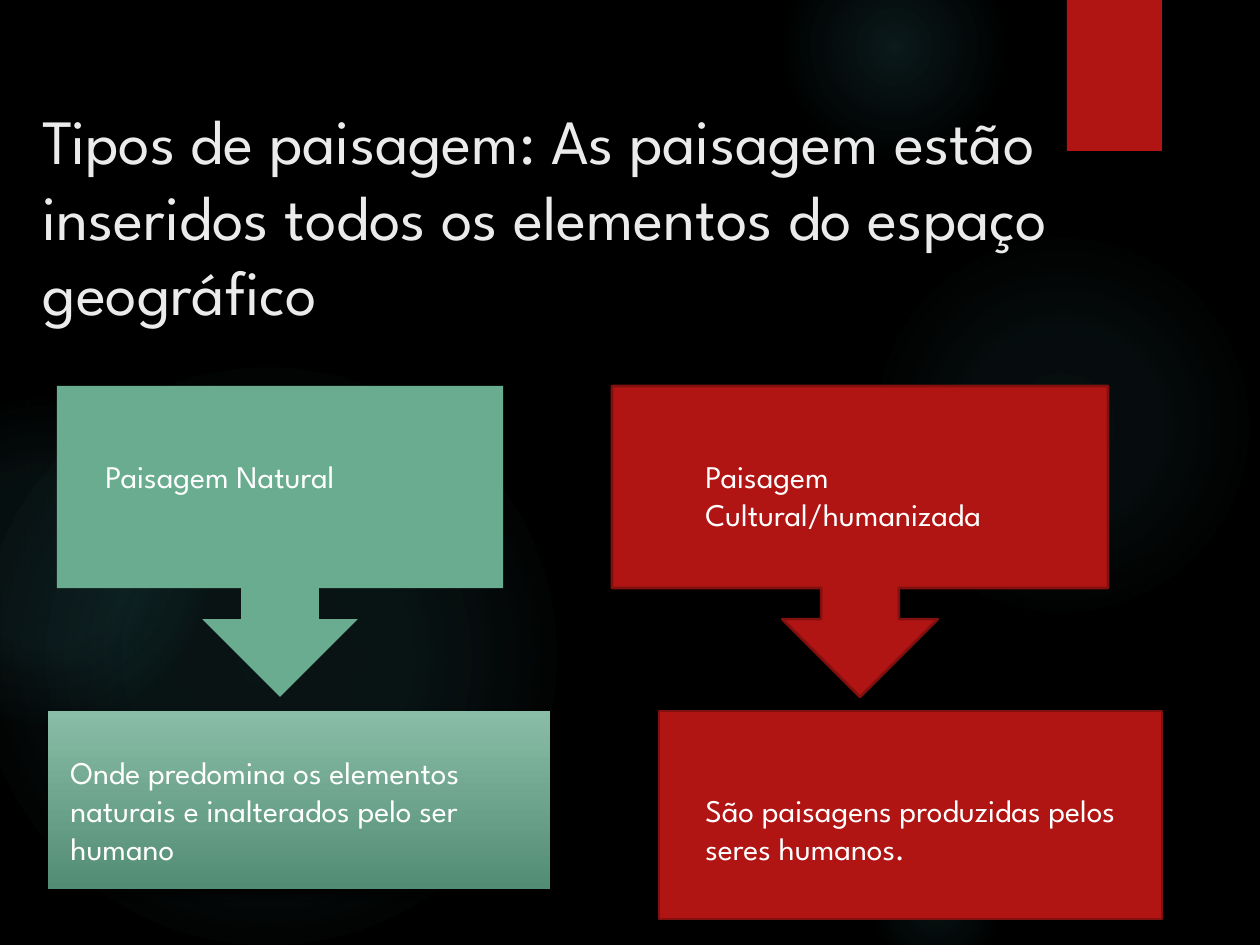
from pptx import Presentation
from pptx.dml.color import RGBColor
from pptx.enum.shapes import MSO_SHAPE
from pptx.enum.text import MSO_ANCHOR, MSO_AUTO_SIZE, PP_ALIGN
from pptx.oxml import parse_xml
from pptx.oxml.ns import nsdecls
from pptx.util import Emu, Pt

BLACK = RGBColor(0x00, 0x00, 0x00)
WHITE = RGBColor(0xFF, 0xFF, 0xFF)
PALE = RGBColor(0xEB, 0xEB, 0xEB)
TEAL = RGBColor(0x50, 0xB9, 0xC1)
GREEN = RGBColor(0x6A, 0xAC, 0x90)
LIGHT_GREEN = RGBColor(0x89, 0xBD, 0xA7)
DARK_GREEN = RGBColor(0x53, 0x8C, 0x74)
RED = RGBColor(0xB0, 0x15, 0x13)
DARK_RED = RGBColor(0x82, 0x10, 0x0E)

FONT = "League Spartan"
RADIAL = ('<a:path path="circle"><a:fillToRect l="50000" t="50000" '
          'r="50000" b="50000"/></a:path>')
DOWNWARD = '<a:lin ang="5400000" scaled="0"/>'


def px(length):
    return Emu(round(length * 914400 / 126))


class LandscapeSlide:
    def __init__(self, presentation):
        self.slide = presentation.slides.add_slide(presentation.slide_layouts[5])
        background = self.slide.background.fill
        background.solid()
        background.fore_color.rgb = BLACK

    def shape(self, kind, box, fill=None, line=None):
        shape = self.slide.shapes.add_shape(kind, *map(px, box))
        shape.shadow.inherit = False
        if fill is not None:
            shape.fill.solid()
            shape.fill.fore_color.rgb = fill
        if line is None:
            shape.line.fill.background()
        else:
            shape.line.color.rgb = line
            shape.line.width = Pt(1.5)
        return shape

    def gradient(self, shape, stops, direction):
        marks = "".join(
            f'<a:gs pos="{position * 1000}"><a:srgbClr val="{color}">'
            f'<a:alpha val="{opacity * 1000}"/></a:srgbClr></a:gs>'
            for position, color, opacity in stops)
        geometry = shape.element.spPr.prstGeom
        geometry.addnext(parse_xml(
            f'<a:gradFill {nsdecls("a")} rotWithShape="1">'
            f'<a:gsLst>{marks}</a:gsLst>{direction}</a:gradFill>'))

    def shadow(self, shape, opacity, blur, distance):
        effects = shape.element.spPr[-1]
        effects.append(parse_xml(
            f'<a:outerShdw {nsdecls("a")} blurRad="{Pt(blur)}" '
            f'dist="{Pt(distance)}" dir="5400000" rotWithShape="0">'
            f'<a:srgbClr val="{BLACK}"><a:alpha val="{opacity * 1000}"/>'
            f'</a:srgbClr></a:outerShdw>'))

    def glow(self, left, top, size, stops):
        circle = self.shape(MSO_SHAPE.OVAL, (left, top, size, size))
        self.gradient(circle, [(at, TEAL, opacity) for at, opacity in stops], RADIAL)

    def callout(self, left, top, width, height, fill, line=None):
        shift = (width - height) / 2
        box = (left + shift, top - shift, height, width)
        self.shape(MSO_SHAPE.RIGHT_ARROW_CALLOUT, box, fill, line).rotation = 90

    def set_words(self, frame, words, size, color):
        frame.word_wrap = True
        frame.text = words
        paragraph = frame.paragraphs[0]
        paragraph.alignment = PP_ALIGN.LEFT
        paragraph.font.name = FONT
        paragraph.font.size = Pt(size)
        paragraph.font.color.rgb = color

    def title(self, box, words):
        title = self.slide.shapes.title
        title.left, title.top, title.width, title.height = map(px, box)
        frame = title.text_frame
        frame.auto_size = MSO_AUTO_SIZE.NONE
        frame.vertical_anchor = MSO_ANCHOR.MIDDLE
        self.set_words(frame, words, 36, PALE)
        title.element.getparent().append(title.element)

    def label(self, box, words):
        frame = self.slide.shapes.add_textbox(*map(px, box)).text_frame
        self.set_words(frame, words, 18, WHITE)
        frame.auto_size = MSO_AUTO_SIZE.SHAPE_TO_FIT_TEXT


def main():
    presentation = Presentation()
    presentation.slide_width = px(1260)
    presentation.slide_height = px(945)
    page = LandscapeSlide(presentation)

    for left, top, size, stops in [
        (868, 231, 388, [(0, 7), (36, 6), (69, 0)]),
        (784, -63, 220, [(0, 14), (36, 7), (73, 0)]),
        (868, 840, 136, [(0, 9), (36, 5), (66, 0)]),
        (-21, 368, 577, [(0, 11), (36, 10), (75, 0)]),
        (-116, 399, 325, [(0, 8), (36, 8), (72, 0)]),
    ]:
        page.glow(left, top, size, stops)

    ribbon = page.shape(MSO_SHAPE.RECTANGLE, (1067, 0, 95, 151), RED)
    page.shadow(ribbon, 45, 3, 2)
    page.title((30, 96, 1200, 238),
               "Tipos de paisagem: As paisagem estão inseridos todos os "
               "elementos do espaço geográfico")

    page.callout(57, 386, 446, 311, GREEN)
    page.callout(612, 386, 496, 311, RED, DARK_RED)
    page.label((93, 451, 338, 50), "Paisagem Natural")
    page.label((693, 451, 413, 89), "Paisagem Cultural/humanizada")

    natural = page.shape(MSO_SHAPE.RECTANGLE, (48, 711, 502, 178))
    page.gradient(natural, [(0, LIGHT_GREEN, 100), (100, DARK_GREEN, 100)], DOWNWARD)
    page.shadow(natural, 60, 5, 3)
    page.label((58, 747, 483, 127),
               "Onde predomina os elementos naturais e inalterados pelo ser humano")
    page.shape(MSO_SHAPE.RECTANGLE, (659, 711, 503, 208), RED, DARK_RED)
    page.label((693, 785, 441, 89), "São paisagens produzidas pelos seres humanos.")

    presentation.save("out.pptx")


if __name__ == "__main__":
    main()
